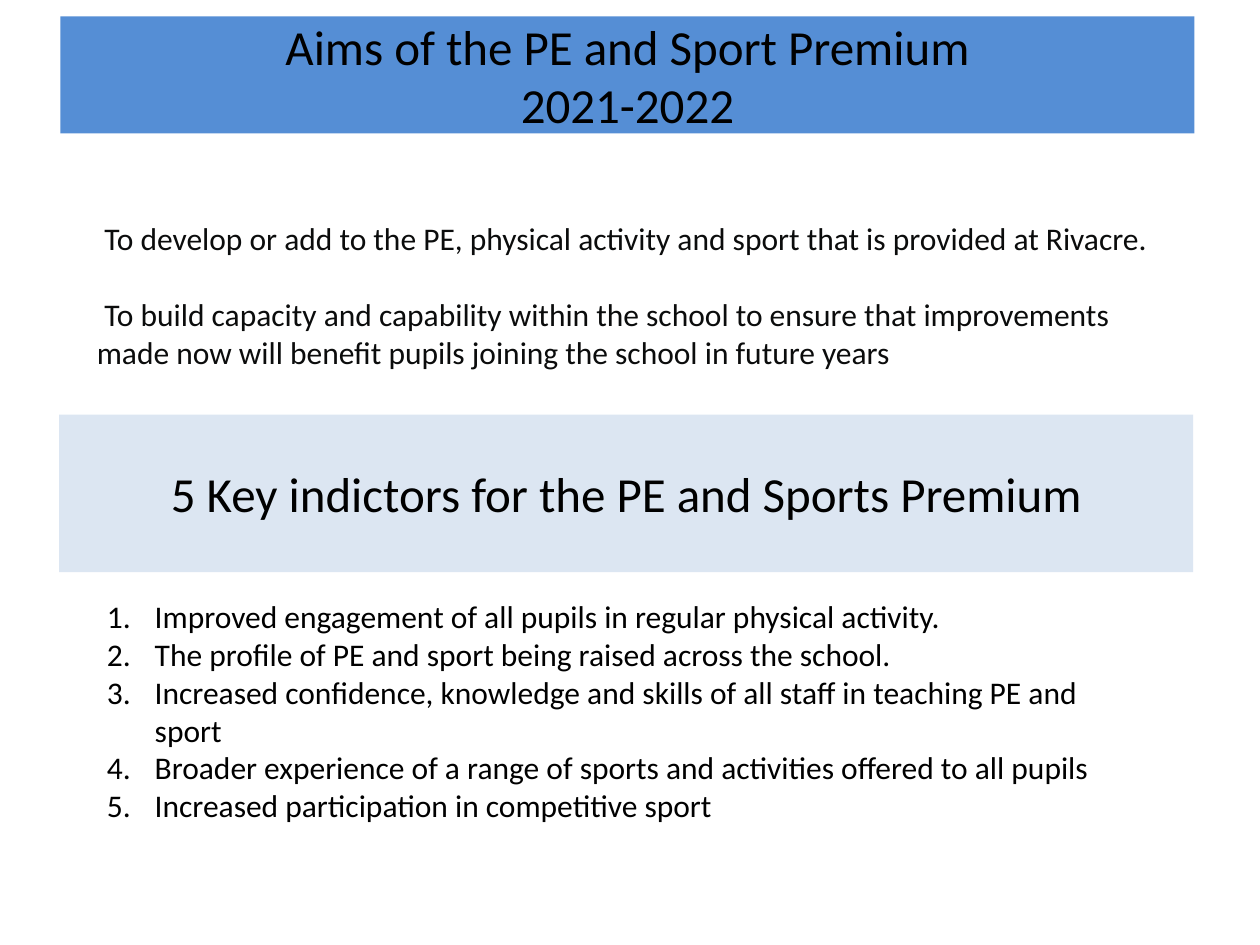
"""Build the slide on the aims and key indicators of the PE and Sport Premium."""
from lxml import etree
from pptx import Presentation
from pptx.dml.color import RGBColor
from pptx.enum.shapes import MSO_SHAPE
from pptx.enum.text import MSO_ANCHOR, PP_ALIGN
from pptx.oxml.ns import qn
from pptx.util import Inches, Pt

BLACK = RGBColor(0x00, 0x00, 0x00)
NEAR_BLACK = RGBColor(0x0B, 0x0C, 0x0C)
BLUE = RGBColor(0x55, 0x8E, 0xD5)
PALE_BLUE = RGBColor(0xDC, 0xE6, 0xF2)
RECTANGLE = MSO_SHAPE.RECTANGLE
MIDDLE = MSO_ANCHOR.MIDDLE
CENTER = PP_ALIGN.CENTER

BANNERS = [
    (0.48, 0.13, 0.93, BLUE, "Aims of the PE and Sport Premium\n2021-2022"),
    (0.47, 3.29, 1.25, PALE_BLUE, "5 Key indictors for the PE and Sports Premium"),
]
AIMS = [
    "To develop or add to the PE, physical activity and sport that is provided at Rivacre.",
    "To build capacity and capability within the school to ensure that improvements "
    "made now will benefit pupils joining the school in future years",
]
INDICATORS = [
    "Improved engagement of all pupils in regular physical activity.",
    "The profile of PE and sport being raised across the school.",
    "Increased confidence, knowledge and skills of all staff in teaching PE and sport",
    "Broader experience of a range of sports and activities offered to all pupils",
    "Increased participation in competitive sport",
]
LISTS = [
    (0.67, 1.69, 8.66, 1.6, NEAR_BLACK, AIMS, 0, 0.06, 22, False),
    (0.75, 4.69, 8.27, 2.0, BLACK, INDICATORS, 0.38, -0.38, 0, True),
]


def style_runs(para, size, color):
    for span in para.runs:
        span.font.name = "Calibri"
        span.font.size = Pt(size)
        span.font.color.rgb = color


deck = Presentation()
deck.slide_width = Inches(10)
deck.slide_height = Inches(7.5)
page = deck.slides.add_slide(deck.slide_layouts[6])

for left, top, height, fill, text in BANNERS:
    banner = page.shapes.add_shape(
        RECTANGLE, Inches(left), Inches(top), Inches(9), Inches(height)
    )
    banner.shadow.inherit = False
    banner.fill.solid()
    banner.fill.fore_color.rgb = fill
    banner.line.fill.background()
    banner.text_frame.text = text
    banner.text_frame.word_wrap = True
    banner.text_frame.vertical_anchor = MIDDLE
    for para in banner.text_frame.paragraphs:
        para.alignment = CENTER
        style_runs(para, 28, BLACK)

for left, top, width, height, color, lines, margin, indent, gap, numbered in LISTS:
    box = page.shapes.add_textbox(
        Inches(left), Inches(top), Inches(width), Inches(height)
    )
    box.text_frame.text = "\n".join(lines)
    box.text_frame.word_wrap = True
    for index, para in enumerate(box.text_frame.paragraphs):
        properties = para._p.get_or_add_pPr()
        properties.set("marL", str(Inches(margin)))
        properties.set("indent", str(Inches(indent)))
        if numbered:
            etree.SubElement(properties, qn("a:buFont"), typeface="+mj-lt")
            etree.SubElement(properties, qn("a:buAutoNum"), type="arabicPeriod")
        if index and gap:
            para.space_before = Pt(gap)
        style_runs(para, 18, color)

deck.save("out.pptx")
